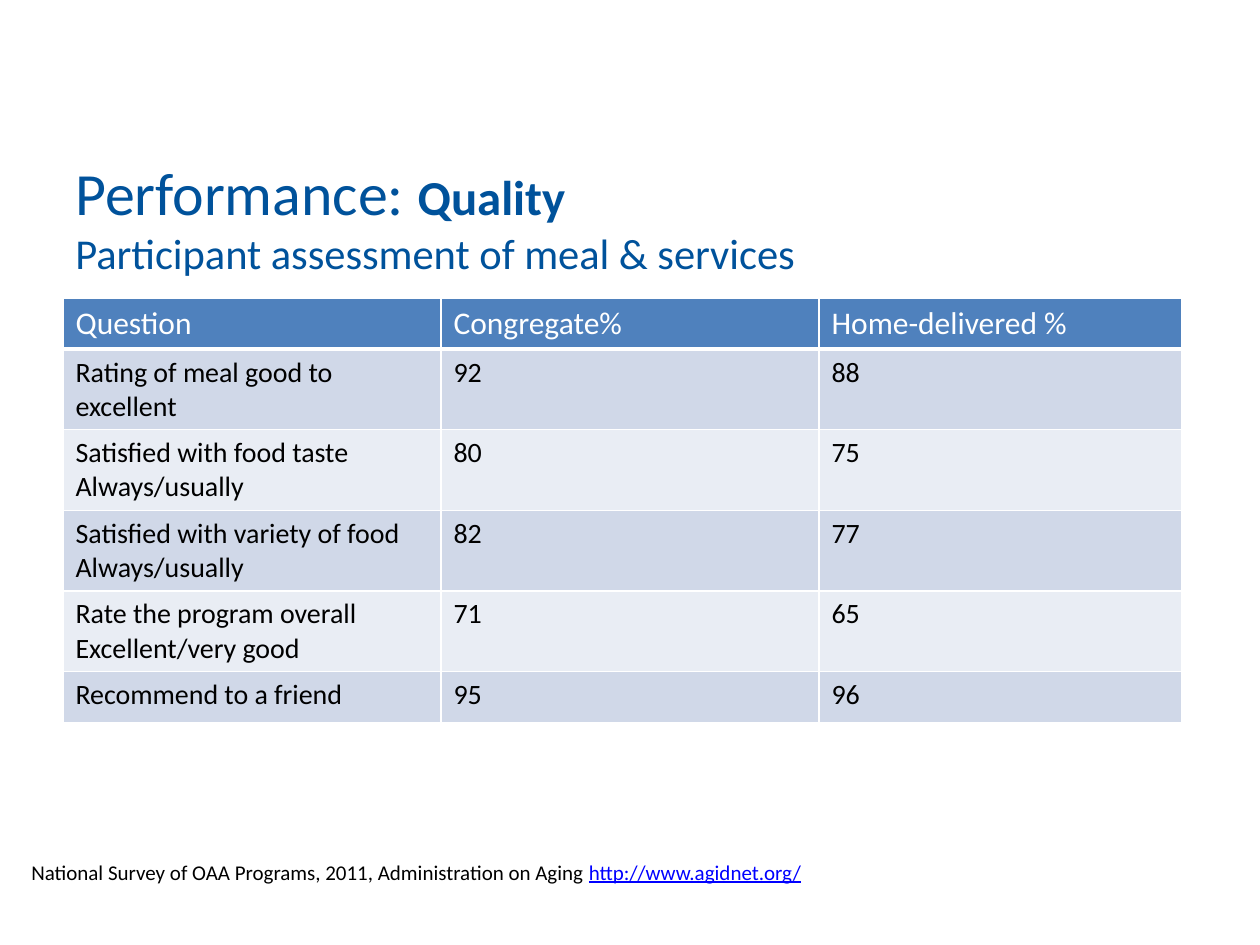
from lxml import etree
from pptx import Presentation
from pptx.dml.color import RGBColor
from pptx.enum.text import MSO_ANCHOR
from pptx.oxml.ns import qn
from pptx.util import Inches, Pt

MIDDLE, TOP = MSO_ANCHOR.MIDDLE, MSO_ANCHOR.TOP

WHITE = RGBColor(0xFF, 0xFF, 0xFF)
BLACK = RGBColor(0x00, 0x00, 0x00)
TITLE_BLUE = RGBColor(0x00, 0x52, 0x9B)
HEADER_BLUE = RGBColor(0x4F, 0x81, 0xBD)
BAND_DARK = RGBColor(0xD0, 0xD8, 0xE8)
BAND_LIGHT = RGBColor(0xE9, 0xED, 0xF4)
LINK_BLUE = RGBColor(0x00, 0x00, 0xFF)

HEADERS = ["Question", "Congregate%", "Home-delivered %"]
RATINGS = [
    ("Rating of meal good to excellent", "92", "88"),
    ("Satisfied with food taste\nAlways/usually", "80", "75"),
    ("Satisfied with variety of food\nAlways/usually", "82", "77"),
    ("Rate the program overall\nExcellent/very good", "71", "65"),
    ("Recommend to a friend", "95", "96"),
]
COL_WIDTHS = [3, 3, 2.88]
ROW_HEIGHTS = [0.4] + [0.64] * 4 + [0.41]


class SlideBuilder:
    """Holds the text style and the current slide."""

    font = "Calibri"

    def __init__(self, slide):
        self.slide = slide

    def run(self, p, text, size, color, bold=False, underline=False):
        r = p.add_run()
        r.text = text
        r.font.name = self.font
        r.font.size = Pt(size)
        r.font.color.rgb = color
        r.font.bold = bold
        r.font.underline = underline

    def text_box(self, left, top, width, height, anchor=TOP, wrap=True):
        sp = self.slide.shapes.add_textbox(
            Inches(left), Inches(top), Inches(width), Inches(height))
        tf = sp.text_frame
        tf.word_wrap = wrap
        tf.vertical_anchor = anchor
        return tf.paragraphs[0]

    def borders(self, cell, bottom):
        tc_pr = cell._tc.get_or_add_tcPr()
        sides = {"a:lnL": 1, "a:lnR": 1, "a:lnT": 1, "a:lnB": bottom}
        for i, (tag, width) in enumerate(sides.items()):
            ln = etree.Element(qn(tag), w=str(Pt(width)))
            fill = etree.SubElement(ln, qn("a:solidFill"))
            etree.SubElement(fill, qn("a:srgbClr"), val=str(WHITE))
            tc_pr.insert(i, ln)

    def cell(self, cell, text, size, color, fill, bottom=1):
        cell.fill.solid()
        cell.fill.fore_color.rgb = fill
        self.borders(cell, bottom)
        tf = cell.text_frame
        for i, line in enumerate(text.split("\n")):
            p = tf.add_paragraph() if i else tf.paragraphs[0]
            self.run(p, line, size, color)

    def table(self, left, top, headers, rows, widths, heights):
        table = self.slide.shapes.add_table(
            len(rows) + 1, len(headers), Inches(left), Inches(top),
            Inches(sum(widths)), Inches(sum(heights))).table
        for col, width in zip(table.columns, widths):
            col.width = Inches(width)
        for row, height in zip(table.rows, heights):
            row.height = Inches(height)
        for c, text in enumerate(headers):
            self.cell(table.cell(0, c), text, 18, WHITE, HEADER_BLUE, bottom=3)
        for r, values in enumerate(rows, start=1):
            band = BAND_DARK if r % 2 else BAND_LIGHT
            for c, text in enumerate(values):
                self.cell(table.cell(r, c), text, 16, BLACK, band)


def main():
    prs = Presentation()
    prs.slide_width, prs.slide_height = Inches(10), Inches(7.5)
    s = SlideBuilder(prs.slides.add_slide(prs.slide_layouts[6]))

    # Title and subtitle
    p = s.text_box(0.5, 1.16, 9, 1.12, anchor=MIDDLE)
    s.run(p, "Performance: ", 34.2, TITLE_BLUE)
    s.run(p, "Quality", 27.9, TITLE_BLUE, bold=True)
    p.add_line_break()
    s.run(p, "Participant assessment of meal & services", 24.3, TITLE_BLUE)

    # Survey results
    s.table(0.5, 2.37, HEADERS, RATINGS, COL_WIDTHS, ROW_HEIGHTS)

    # Source line
    p = s.text_box(0.15, 6.77, 6.42, 0.5, wrap=False)
    s.run(p, "National Survey of OAA Programs, 2011, Administration on Aging ",
          12, BLACK)
    s.run(p, "http://www.agidnet.org/", 12, LINK_BLUE, underline=True)
    s.run(p, " ", 12, BLACK)

    prs.save("out.pptx")


if __name__ == "__main__":
    main()
